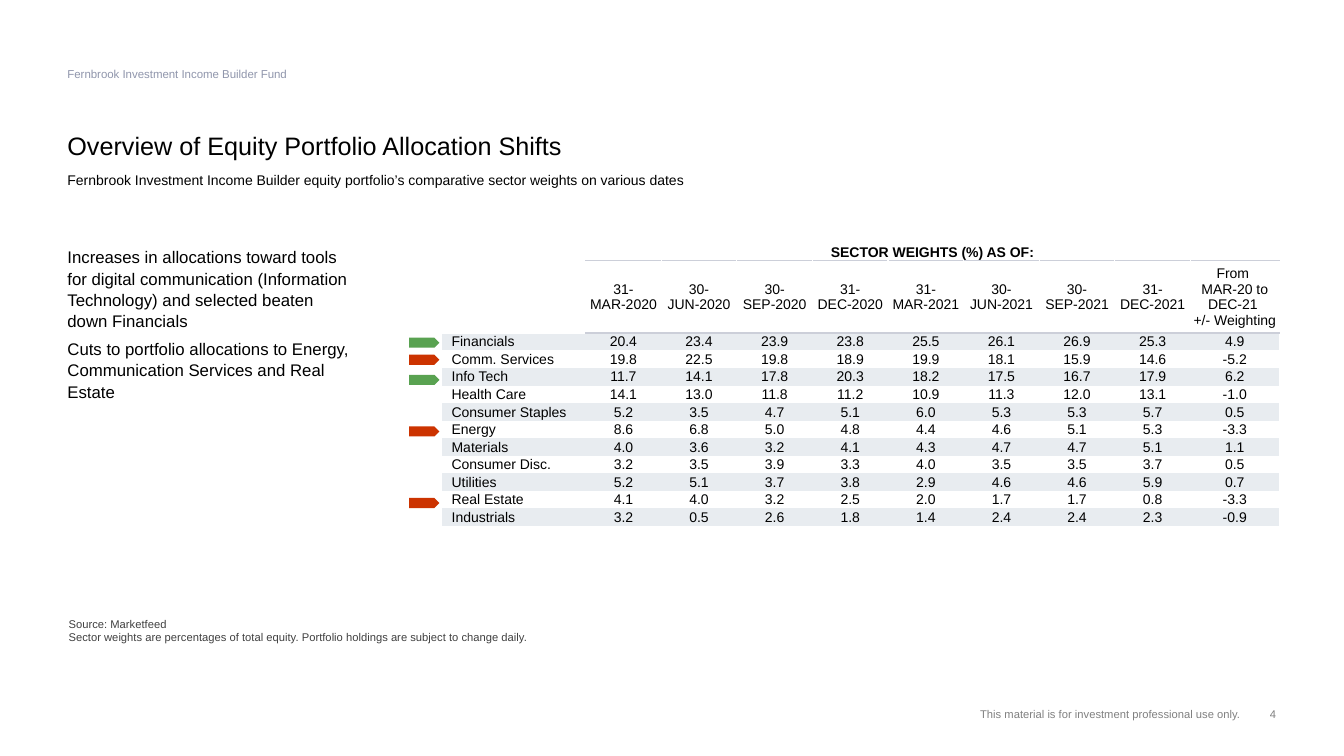
from dataclasses import dataclass

from lxml.etree import SubElement
from pptx import Presentation
from pptx.dml.color import RGBColor
from pptx.enum.shapes import MSO_SHAPE
from pptx.enum.text import MSO_ANCHOR, PP_ALIGN
from pptx.oxml.ns import qn
from pptx.util import Pt

FONT = "Arial"
BLACK, GREY, WHITE = "000000", "808080", "FFFFFF"
BAND, RULE = "E8ECF0", "CCCFD9"
UP, DOWN = "59A251", "CC3300"
NO_STYLE = "{2D5ABB26-0587-4C30-8999-92F81FD0307C}"


@dataclass
class Label:
    left: float
    top: float
    width: float
    height: float
    paragraphs: list[str]
    size: float
    color: str = BLACK
    align: PP_ALIGN = PP_ALIGN.LEFT
    anchor: MSO_ANCHOR = MSO_ANCHOR.TOP
    line_spacing: float = 1.0
    space_after: float = 0


@dataclass
class Marker:
    top: float
    color: str


LABELS = [
    Label(48.2, 175.7, 206.6, 199.4,
          ["Increases in allocations toward tools for digital communication "
           "(Information Technology) and selected beaten down Financials",
           "Cuts to portfolio allocations to Energy, Communication Services "
           "and Real Estate"],
          12, line_spacing=1.06, space_after=4.5),
    Label(480.2, 500.4, 406.1, 14.4,
          ["This material is for investment professional use only."],
          8, GREY, PP_ALIGN.RIGHT, MSO_ANCHOR.BOTTOM),
    Label(885.6, 500.4, 25.9, 14.4, ["4"], 8, GREY, PP_ALIGN.RIGHT, MSO_ANCHOR.BOTTOM),
    Label(48.2, 48.2, 288, 10.1, ["Fernbrook Investment Income Builder Fund"], 8.2, "9096AC"),
    Label(49, 440.6, 832.3, 18.4,
          ["Source: Marketfeed",
           "Sector weights are percentages of total equity. Portfolio holdings "
           "are subject to change daily."],
          8, "404040"),
    Label(48.2, 95.8, 672.5, 19.4, ["Overview of Equity Portfolio Allocation Shifts"],
          18, anchor=MSO_ANCHOR.BOTTOM, line_spacing=0.9),
    Label(48.2, 122.4, 672.5, 13,
          ["Fernbrook Investment Income Builder equity portfolio’s comparative "
           "sector weights on various dates"], 10),
]

MARKERS = [Marker(241.2, UP), Marker(253.4, DOWN), Marker(267.8, UP),
           Marker(304.6, DOWN), Marker(355.7, DOWN)]

DATES = ["31-MAR-2020", "30-JUN-2020", "30-SEP-2020", "31-DEC-2020",
         "31-MAR-2021", "30-JUN-2021", "30-SEP-2021", "31-DEC-2021"]
CHANGE = "From \nMAR-20 to DEC-21 \n+/- Weighting"

SECTORS = {
    "Financials": "20.4 23.4 23.9 23.8 25.5 26.1 26.9 25.3 4.9",
    "Comm. Services": "19.8 22.5 19.8 18.9 19.9 18.1 15.9 14.6 -5.2",
    "Info Tech": "11.7 14.1 17.8 20.3 18.2 17.5 16.7 17.9 6.2",
    "Health Care": "14.1 13.0 11.8 11.2 10.9 11.3 12.0 13.1 -1.0",
    "Consumer Staples": "5.2 3.5 4.7 5.1 6.0 5.3 5.3 5.7 0.5",
    "Energy": "8.6 6.8 5.0 4.8 4.4 4.6 5.1 5.3 -3.3",
    "Materials": "4.0 3.6 3.2 4.1 4.3 4.7 4.7 5.1 1.1",
    "Consumer Disc.": "3.2 3.5 3.9 3.3 4.0 3.5 3.5 3.7 0.5",
    "Utilities": "5.2 5.1 3.7 3.8 2.9 4.6 4.6 5.9 0.7",
    "Real Estate": "4.1 4.0 3.2 2.5 2.0 1.7 1.7 0.8 -3.3",
    "Industrials": "3.2 0.5 2.6 1.8 1.4 2.4 2.4 2.3 -0.9",
}
COLUMN_WIDTHS = [102.9] + [54] * len(DATES) + [63.3]
ROW_HEIGHTS = [11.9, 51.8] + [11.9] * len(SECTORS)


def rgb(color: str) -> RGBColor:
    return RGBColor.from_string(color)


def add_span(para, text: str, size: float, color: str, bold: bool = False) -> None:
    span = para.add_run()
    span.text = text
    span.font.name, span.font.size, span.font.bold = FONT, Pt(size), bold
    span.font.color.rgb = rgb(color)


def add_label(page, label: Label) -> None:
    box = page.shapes.add_textbox(Pt(label.left), Pt(label.top), Pt(label.width), Pt(label.height))
    frame = box.text_frame
    frame.word_wrap = True
    frame.vertical_anchor = label.anchor
    frame.margin_left = frame.margin_right = frame.margin_top = frame.margin_bottom = 0
    for index, text in enumerate(label.paragraphs):
        para = frame.add_paragraph() if index else frame.paragraphs[0]
        para.alignment = label.align
        para.line_spacing = label.line_spacing
        para.space_after = Pt(label.space_after)
        add_span(para, text, label.size, label.color)


def add_marker(page, marker: Marker) -> None:
    arrow = page.shapes.add_shape(MSO_SHAPE.PENTAGON, Pt(292.3), Pt(marker.top), Pt(21.6), Pt(7.2))
    arrow.shadow.inherit = False
    arrow.fill.solid()
    arrow.fill.fore_color.rgb = rgb(marker.color)
    arrow.line.fill.background()


def set_borders(cell, **colors: str) -> None:
    properties = cell._tc.get_or_add_tcPr()
    for side in "LRTB":
        if side in colors:
            line = SubElement(properties, qn(f"a:ln{side}"), w=str(Pt(1)))
            fill = SubElement(line, qn("a:solidFill"))
            SubElement(fill, qn("a:srgbClr"), val=colors[side])


def fill_cell(cell, text: str, row: int, column: int) -> None:
    cell.margin_left = Pt(7.2 if row > 1 and column == 0 else 0.5)
    cell.margin_right = cell.margin_top = Pt(0.5)
    cell.margin_bottom = 0
    cell.vertical_anchor = MSO_ANCHOR.MIDDLE if row else MSO_ANCHOR.BOTTOM
    # Rule between the heading and the dates
    if row == 0:
        set_borders(cell, L=WHITE, R=WHITE, T=WHITE, B=RULE if column else WHITE)
    elif row == 1:
        set_borders(cell, L=WHITE, R=WHITE, T=RULE if column else WHITE)
    # Banded sector rows
    if row > 1 and row % 2 == 0:
        cell.fill.solid()
        cell.fill.fore_color.rgb = rgb(BAND)
    else:
        cell.fill.background()
    para = cell.text_frame.paragraphs[0]
    if not text:
        para._p.get_or_add_endParaRPr().set("sz", "1000")
        return
    para.alignment = PP_ALIGN.CENTER if column or row < 2 else PP_ALIGN.LEFT
    for index, line in enumerate(text.split("\n")):
        if index:
            para.add_line_break()
        add_span(para, line, 10, BLACK, bold=row == 0)


def add_weights_table(page) -> None:
    rows = [["", "SECTOR WEIGHTS (%) AS OF:"] + [""] * len(DATES), ["", *DATES, CHANGE]]
    rows += [[sector, *weights.split()] for sector, weights in SECTORS.items()]
    frame = page.shapes.add_table(len(rows), len(COLUMN_WIDTHS), Pt(315.4), Pt(173.5),
                                  Pt(sum(COLUMN_WIDTHS)), Pt(sum(ROW_HEIGHTS)))
    table = frame.table
    table.first_row = table.horz_banding = False
    table._tbl.tblPr.find(qn("a:tableStyleId")).text = NO_STYLE
    for column, width in zip(table.columns, COLUMN_WIDTHS):
        column.width = Pt(width)
    for row, height in zip(table.rows, ROW_HEIGHTS):
        row.height = Pt(height)
    for row_index, texts in enumerate(rows):
        for column_index, text in enumerate(texts):
            fill_cell(table.cell(row_index, column_index), text, row_index, column_index)
    table.cell(0, 1).merge(table.cell(0, len(COLUMN_WIDTHS) - 1))


def main() -> None:
    deck = Presentation()
    deck.slide_width, deck.slide_height = Pt(960), Pt(540)
    page = deck.slides.add_slide(deck.slide_layouts[6])
    # Titles, commentary and footer
    for label in LABELS:
        add_label(page, label)
    # Sector weights with direction markers
    add_weights_table(page)
    for marker in MARKERS:
        add_marker(page, marker)
    deck.save("out.pptx")


if __name__ == "__main__":
    main()
